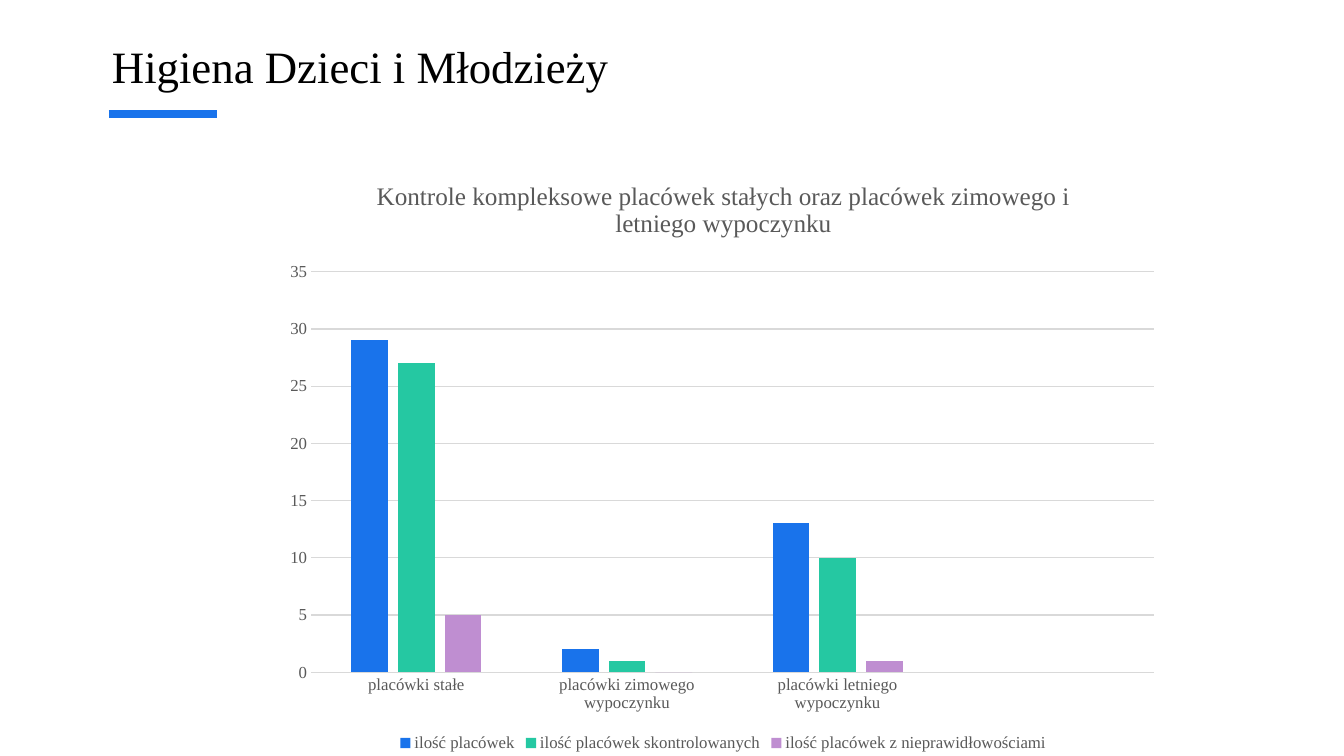
import pptx
import pptx.chart.data
import pptx.dml.color
import pptx.enum.chart
import pptx.enum.text
import pptx.oxml
import pptx.oxml.ns
import pptx.util
from dataclasses import dataclass
from lxml import etree

Inches = pptx.util.Inches
Pt = pptx.util.Pt


def rgb(value):
    return pptx.dml.color.RGBColor.from_string(value)


@dataclass
class Theme:
    font: str = "Times New Roman"
    ink: str = "000000"
    label: str = "595959"
    grid: str = "D9D9D9"
    accent: str = "1973EB"
    series: tuple = ("1973EB", "25C8A2", "BF8ED1")
    title_size: int = 32
    chart_title_size: int = 18
    label_size: int = 12


class SlideBuilder:
    def __init__(self, slide, theme):
        self.slide = slide
        self.theme = theme

    def style_font(self, font, size, color):
        font.name = self.theme.font
        font.size = Pt(size)
        font.bold = False
        font.color.rgb = rgb(color)

    def title(self, text, left, top, width, height):
        heading = self.slide.shapes.title
        heading.left, heading.top = Inches(left), Inches(top)
        heading.width, heading.height = Inches(width), Inches(height)
        frame = heading.text_frame
        frame.text = text
        frame.word_wrap = True
        frame.auto_size = pptx.enum.text.MSO_AUTO_SIZE.NONE
        frame.vertical_anchor = pptx.enum.text.MSO_ANCHOR.TOP
        frame.margin_top = Inches(0.11)
        paragraph = frame.paragraphs[0]
        paragraph.alignment = pptx.enum.text.PP_ALIGN.LEFT
        self.style_font(paragraph.font, self.theme.title_size, self.theme.ink)

    def rule(self, left, right, y, weight):
        line = self.slide.shapes.add_connector(
            pptx.enum.shapes.MSO_CONNECTOR.STRAIGHT,
            Inches(left), Inches(y), Inches(right), Inches(y))
        line.line.color.rgb = rgb(self.theme.accent)
        line.line.width = Pt(weight)
        etree.SubElement(line._element.spPr, pptx.oxml.ns.qn("a:effectLst"))

    def column_chart(self, heading, categories, series, left, top, width, height):
        theme = self.theme
        data = pptx.chart.data.CategoryChartData()
        data.categories = categories
        for name, values in series:
            data.add_series(name, values)
        chart = self.slide.shapes.add_chart(
            pptx.enum.chart.XL_CHART_TYPE.COLUMN_CLUSTERED,
            Inches(left), Inches(top), Inches(width), Inches(height), data).chart
        self.style_font(chart.font, theme.label_size, theme.label)

        # Chart title
        chart.has_title = True
        chart.chart_title.include_in_layout = False
        chart.chart_title.text_frame.text = heading
        self.style_font(chart.chart_title.text_frame.paragraphs[0].font,
                        theme.chart_title_size, theme.label)

        # Columns
        plot = chart.plots[0]
        plot.gap_width, plot.overlap = 219, -27
        plot.vary_by_categories = False
        for columns, color in zip(plot.series, theme.series):
            columns.format.fill.solid()
            columns.format.fill.fore_color.rgb = rgb(color)
            columns.invert_if_negative = False

        # Axes and gridlines
        for axis in (chart.category_axis, chart.value_axis):
            axis.major_tick_mark = pptx.enum.chart.XL_TICK_MARK.NONE
            axis.minor_tick_mark = pptx.enum.chart.XL_TICK_MARK.NONE
            self.style_font(axis.tick_labels.font, theme.label_size, theme.label)
        chart.value_axis.format.line.fill.background()
        chart.value_axis.minimum_scale, chart.value_axis.maximum_scale = 0, 35
        chart.value_axis.major_unit = 5
        for line in (chart.category_axis.format.line,
                     chart.value_axis.major_gridlines.format.line):
            line.color.rgb = rgb(theme.grid)
            line.width = Pt(0.75)

        # Legend
        chart.has_legend = True
        chart.legend.position = pptx.enum.chart.XL_LEGEND_POSITION.BOTTOM
        chart.legend.include_in_layout = False
        self.style_font(chart.legend.font, theme.label_size, theme.label)
        self.place_plot(chart, x=0.04, y=0.19, w=0.94, h=0.67)

    def place_plot(self, chart, **area):
        qn = pptx.oxml.ns.qn
        plot_area = chart._chartSpace.chart.plotArea
        for old in plot_area.findall(qn("c:layout")):
            plot_area.remove(old)
        layout = etree.Element(qn("c:layout"))
        plot_area.insert(0, layout)
        manual = etree.SubElement(layout, qn("c:manualLayout"))
        settings = {"layoutTarget": "inner", "xMode": "edge", "yMode": "edge", **area}
        for tag, value in settings.items():
            etree.SubElement(manual, qn("c:" + tag)).set("val", str(value))


def main():
    deck = pptx.Presentation()
    deck.slide_width, deck.slide_height = Inches(13.33), Inches(7.5)
    builder = SlideBuilder(deck.slides.add_slide(deck.slide_layouts[5]), Theme())

    # Heading with its accent rule
    builder.rule(1.08, 2.15, 1.13, 6)
    builder.title("Higiena Dzieci i Młodzieży", 1.01, 0.27, 11.33, 0.97)

    # Inspections; the last category is left empty
    builder.column_chart(
        "Kontrole kompleksowe placówek stałych oraz placówek zimowego i letniego wypoczynku",
        ["placówki stałe", "placówki zimowego wypoczynku",
         "placówki letniego wypoczynku", ""],
        [("ilość placówek", (29, 2, 13, None)),
         ("ilość placówek skontrolowanych", (27, 1, 10, None)),
         ("ilość placówek z nieprawidłowościami", (5, 0, 1, None))],
        2.73, 1.57, 8.89, 5.93)

    deck.save("out.pptx")


if __name__ == "__main__":
    main()
